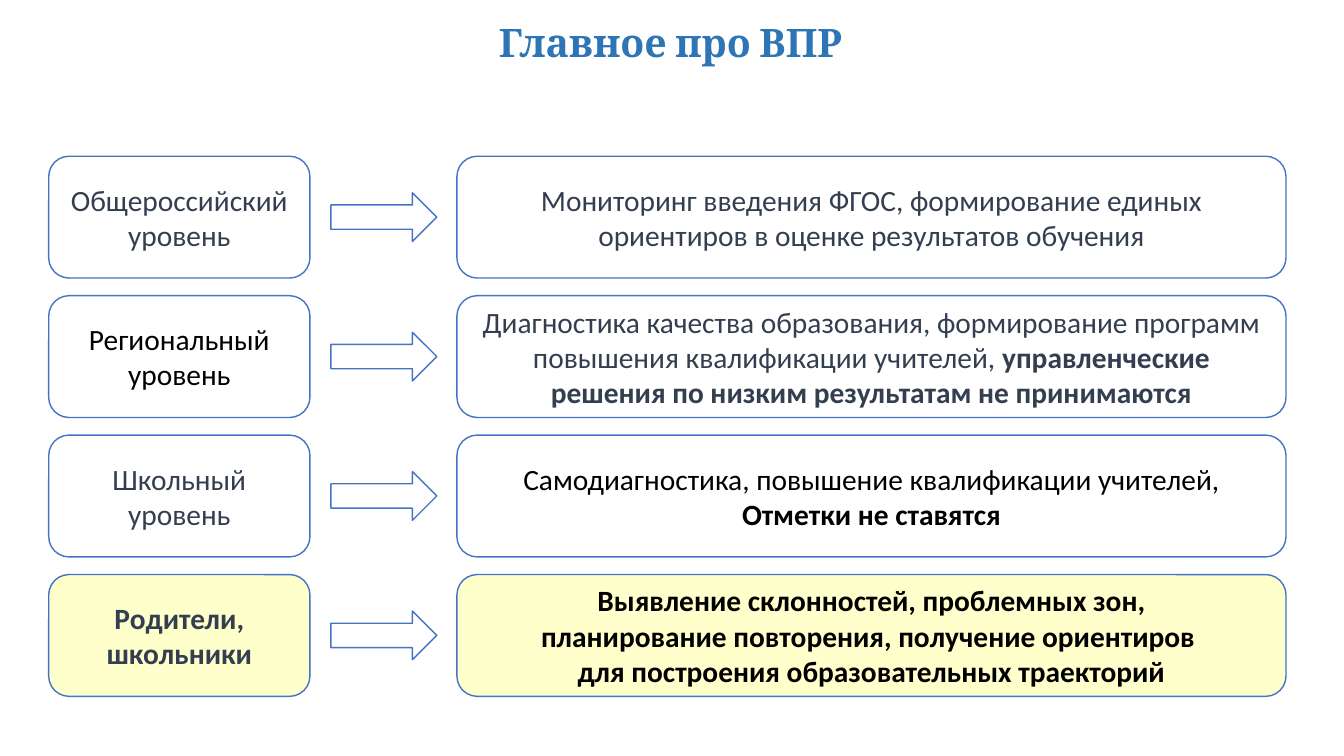
from dataclasses import dataclass

from pptx import Presentation
from pptx.dml.color import RGBColor
from pptx.enum.shapes import MSO_SHAPE
from pptx.enum.text import MSO_ANCHOR, MSO_AUTO_SIZE, PP_ALIGN
from pptx.util import Inches, Pt

GRID_COLUMNS, GRID_ROWS = 160, 90
FIRST_ROW, ROW_STEP, BOX_ROWS, ARROW_ROWS = 18.6, 16.6, 14.5, 5.8

WHITE, CREAM, BORDER = "FFFFFF", "FFFFCC", "4472C4"
SLATE, BLACK, HEADING = "333F50", "000000", "2E75B6"


@dataclass(frozen=True)
class Span:
    start: float
    columns: float


AUDIENCE = Span(5.8, 31.1)
LINK = Span(39.4, 12.6)
PURPOSE = Span(54.4, 98.7)


@dataclass(frozen=True)
class Phrase:
    text: str
    bold: bool = False


@dataclass(frozen=True)
class Label:
    paragraphs: list[list[Phrase]]
    color: str


@dataclass(frozen=True)
class Level:
    audience: Label
    purpose: Label
    fill: str = WHITE


LEVELS = [
    Level(
        Label([[Phrase("Общероссийский уровень")]], SLATE),
        Label([[Phrase("Мониторинг введения ФГОС, формирование единых "
                       "ориентиров в оценке результатов обучения")]], SLATE),
    ),
    Level(
        Label([[Phrase("Региональный уровень")]], BLACK),
        Label([[Phrase("Диагностика качества образования, формирование программ "
                       "повышения квалификации учителей, "),
                Phrase("управленческие решения по низким результатам "
                       "не принимаются", True)]], SLATE),
    ),
    Level(
        Label([[Phrase("Школьный уровень")]], SLATE),
        Label([[Phrase("Самодиагностика, повышение квалификации учителей, "),
                Phrase("Отметки не ставятся", True)]], BLACK),
    ),
    Level(
        Label([[Phrase("Родители, школьники", True)]], SLATE),
        Label([[Phrase("Выявление склонностей, проблемных зон,", True)],
               [Phrase("планирование повторения, получение ориентиров ", True)],
               [Phrase("для построения образовательных траекторий", True)]], BLACK),
        CREAM,
    ),
]

presentation = Presentation()
presentation.slide_width = Inches(13.33)
presentation.slide_height = Inches(7.5)
slide = presentation.slides.add_slide(presentation.slide_layouts[5])


def rgb(color: str) -> RGBColor:
    return RGBColor.from_string(color)


def across(columns: float) -> int:
    return round(presentation.slide_width * columns / GRID_COLUMNS)


def down(rows: float) -> int:
    return round(presentation.slide_height * rows / GRID_ROWS)


def add_outlined(kind: MSO_SHAPE, span: Span, top: float, rows: float, fill: str):
    outlined = slide.shapes.add_shape(
        kind, across(span.start), down(top), across(span.columns), down(rows))
    outlined.shadow.inherit = False
    outlined.fill.solid()
    outlined.fill.fore_color.rgb = rgb(fill)
    outlined.line.color.rgb = rgb(BORDER)
    outlined.line.width = Pt(1)
    return outlined


def add_box(span: Span, top: float, label: Label, fill: str) -> None:
    box = add_outlined(MSO_SHAPE.ROUNDED_RECTANGLE, span, top, BOX_ROWS, fill)
    frame = box.text_frame
    frame.word_wrap = True
    frame.vertical_anchor = MSO_ANCHOR.MIDDLE
    frame.margin_left = frame.margin_right = Inches(0.13)
    frame.margin_top = frame.margin_bottom = Inches(0.07)
    for index, phrases in enumerate(label.paragraphs):
        paragraph = frame.add_paragraph() if index else frame.paragraphs[0]
        paragraph.alignment = PP_ALIGN.CENTER
        paragraph.font.name = "Calibri"
        paragraph.font.size = Pt(21)
        paragraph.font.color.rgb = rgb(label.color)
        for phrase in phrases:
            run = paragraph.add_run()
            run.text = phrase.text
            run.font.bold = phrase.bold


def add_level(level: Level, top: float) -> None:
    add_box(AUDIENCE, top, level.audience, level.fill)
    arrow_top = top + (BOX_ROWS - ARROW_ROWS) / 2
    add_outlined(MSO_SHAPE.RIGHT_ARROW, LINK, arrow_top, ARROW_ROWS, WHITE)
    add_box(PURPOSE, top, level.purpose, level.fill)


def set_heading(text: str) -> None:
    heading = slide.shapes.title
    heading.left, heading.top = across(13.3), down(1.9)
    heading.width, heading.height = across(133.1), down(6.8)
    frame = heading.text_frame
    frame.text = text
    frame.word_wrap = True
    frame.auto_size = MSO_AUTO_SIZE.NONE
    frame.vertical_anchor = MSO_ANCHOR.MIDDLE
    paragraph = frame.paragraphs[0]
    paragraph.alignment = PP_ALIGN.CENTER
    paragraph.line_spacing = 0.9
    paragraph.font.name = "Cambria"
    paragraph.font.size = Pt(28)
    paragraph.font.bold = True
    paragraph.font.color.rgb = rgb(HEADING)


set_heading("Главное про ВПР")
for position, level in enumerate(LEVELS):
    add_level(level, FIRST_ROW + position * ROW_STEP)

presentation.save("out.pptx")
